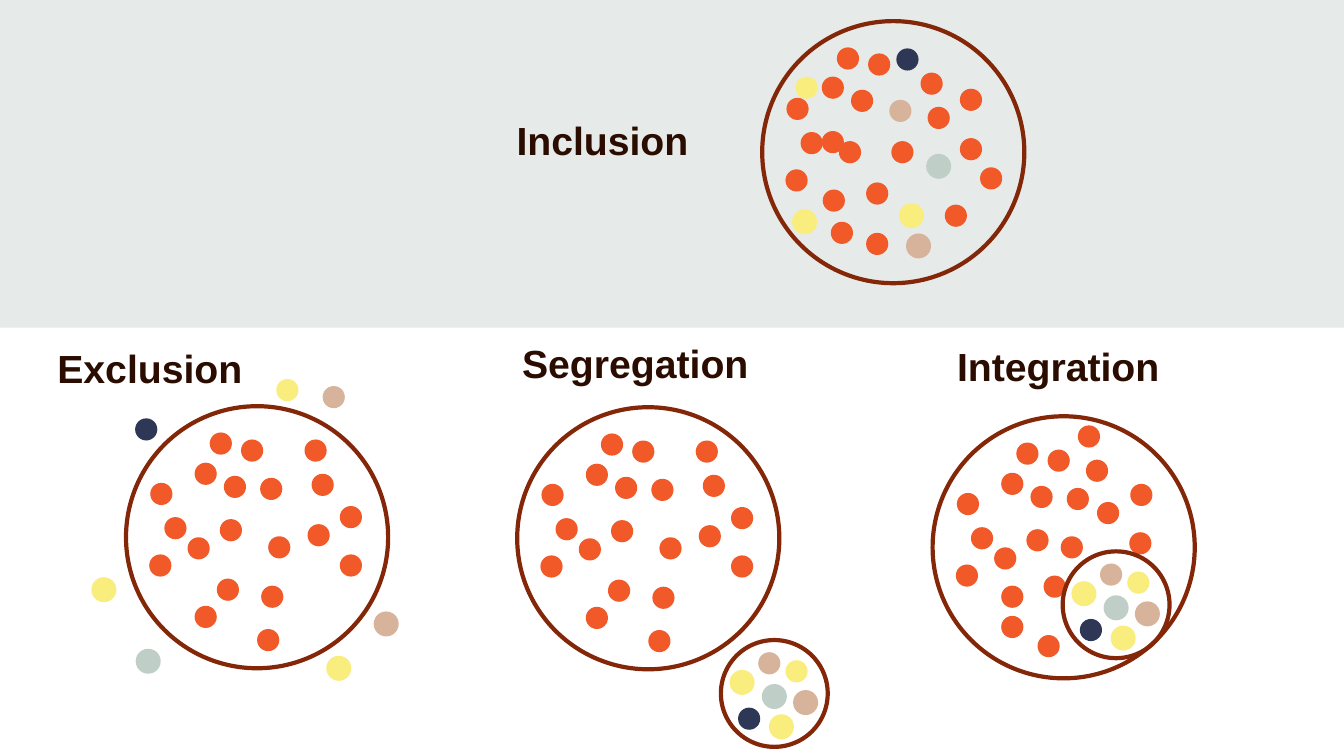
from pptx import Presentation
from pptx.dml.color import RGBColor
from pptx.enum.shapes import MSO_SHAPE as Preset
from pptx.enum.text import MSO_AUTO_SIZE as AutoSize, PP_ALIGN as Align
from pptx.util import Inches, Pt

ORANGE, TAN, YELLOW, NAVY, SAGE = "F15928", "D8B39C", "F9ED7D", "2E3856", "C0CEC8"
BAND, RING, INK = "E6EBE9", "842709", "2B0C00"
DOT_SIZE, LARGE_RING, SMALL_RING = 0.22, 2.6, 1.06

# Colour and outline width of each minority dot; the place lists follow this order.
MINORITY = [(TAN, 0), (YELLOW, 2), (YELLOW, 2), (NAVY, 0),
            (SAGE, 2), (TAN, 2), (YELLOW, 0)]

# Dot places are left and top, measured from the corner of the ring around them.
SHARED_MAJORITY = [
    (1.33, 0.71), (0.68, 1.98), (0.93, 1.12), (0.61, 1.3), (0.38, 1.1), (0.23, 1.47),
    (0.24, 0.76), (0.97, 0.69), (1.14, 0.33), (0.83, 0.26), (0.68, 0.56)]
SEPARATE_MAJORITY = SHARED_MAJORITY + [
    (2.12, 0.99), (1.77, 0.33), (1.3, 2.21), (1.34, 1.78), (0.9, 1.71),
    (1.41, 1.29), (1.84, 0.67), (1.8, 1.17), (2.12, 1.47)]
INTEGRATED_MAJORITY = SHARED_MAJORITY + [
    (1.96, 0.67), (1.44, 0.09), (1.04, 2.17), (1.1, 1.58), (0.68, 1.68),
    (1.27, 1.19), (1.52, 0.43), (1.63, 0.85), (1.95, 1.15)]
INCLUDED_MAJORITY = [
    (1.96, 0.67), (2.16, 1.45), (1.81, 1.82), (1.03, 2.1), (1.03, 1.6),
    (0.6, 1.67), (0.68, 1.99), (0.76, 1.19), (0.59, 1.09), (0.38, 1.1),
    (0.23, 1.47), (0.24, 0.76), (0.88, 0.68), (1.05, 0.32), (0.74, 0.26),
    (0.59, 0.55), (1.28, 1.19), (1.57, 0.51), (1.64, 0.85), (1.96, 1.16)]
INCLUDED_MINORITY = [
    (1.26, 0.78), (1.37, 1.82), (0.31, 1.88), (1.33, 0.27),
    (1.64, 1.33), (1.44, 2.12), (0.33, 0.55)]
EXCLUDED_MINORITY = [
    (1.95, -0.2), (2, 2.49), (-0.33, 1.71), (0.09, 0.12),
    (0.11, 2.42), (2.47, 2.05), (1.49, -0.27)]
ENCLOSED_MINORITY = [
    (0.37, 0.12), (0.49, 0.75), (0.1, 0.31), (0.17, 0.67),
    (0.42, 0.45), (0.73, 0.51), (0.64, 0.2)]


def color(value):
    return RGBColor.from_string(value)


class DiagramSlide:
    """Holds the label style and draws the elements of one slide."""

    label_font = {"name": "Arial", "size": Pt(28), "bold": True}
    label_frame = {"word_wrap": True, "auto_size": AutoSize.SHAPE_TO_FIT_TEXT}

    def __init__(self, presentation):
        self.slide = presentation.slides.add_slide(presentation.slide_layouts[6])

    def shape(self, parent, preset, box, fill=None, line=None, line_width=0):
        shape = parent.shapes.add_shape(preset, *map(Inches, box))
        shape.shadow.inherit = False
        if fill:
            shape.fill.solid()
            shape.fill.fore_color.rgb = color(fill)
        else:
            shape.fill.background()
        if line_width:
            shape.line.color.rgb = color(line)
            shape.line.width = Pt(line_width)
        else:
            shape.line.fill.background()

    def band(self, width, height):
        self.shape(self.slide, Preset.RECTANGLE, (0, 0, width, height), BAND)

    def label(self, text, left, top, alignment):
        box = self.slide.shapes.add_textbox(*map(Inches, (left, top, 2.55, 0.57)))
        for name, value in self.label_frame.items():
            setattr(box.text_frame, name, value)
        paragraph = box.text_frame.paragraphs[0]
        paragraph.alignment = alignment
        run = paragraph.add_run()
        run.text = text
        for name, value in self.label_font.items():
            setattr(run.font, name, value)
        run.font.color.rgb = color(INK)

    def ring(self, group, corner, size):
        self.shape(group, Preset.OVAL, (*corner, size, size), line=RING, line_width=3)

    def dot(self, group, corner, place, fill, line_width=0):
        left, top = corner[0] + place[0], corner[1] + place[1]
        self.shape(group, Preset.OVAL, (left, top, DOT_SIZE, DOT_SIZE),
                   fill, fill, line_width)

    def community(self, corner, majority, minority, enclosure=None):
        """Draw a ring of majority dots with the minority dots placed from the
        same corner, or from the corner of a small enclosing ring."""
        group = self.slide.shapes.add_group_shape()
        self.ring(group, corner, LARGE_RING)
        for place in majority:
            self.dot(group, corner, place, ORANGE)
        for place, (fill, line_width) in zip(minority, MINORITY):
            self.dot(group, enclosure or corner, place, fill, line_width)
        if enclosure:
            self.ring(group, enclosure, SMALL_RING)


def main():
    presentation = Presentation()
    presentation.slide_width, presentation.slide_height = Inches(13.33), Inches(7.5)
    diagram = DiagramSlide(presentation)
    diagram.band(13.33, 3.25)

    diagram.label("Exclusion", 0.47, 3.37, Align.LEFT)
    diagram.label("Segregation", 5.08, 3.32, Align.LEFT)
    diagram.label("Integration", 9.22, 3.35, Align.CENTER)
    diagram.label("Inclusion", 4.7, 1.1, Align.CENTER)

    diagram.community((7.56, 0.21), INCLUDED_MAJORITY, INCLUDED_MINORITY)
    diagram.community((9.25, 4.13), INTEGRATED_MAJORITY, ENCLOSED_MINORITY, (10.54, 5.47))
    diagram.community((1.25, 4.03), SEPARATE_MAJORITY, EXCLUDED_MINORITY)
    diagram.community((5.13, 4.04), SEPARATE_MAJORITY, ENCLOSED_MINORITY, (7.15, 6.35))

    presentation.save("out.pptx")


if __name__ == "__main__":
    main()
